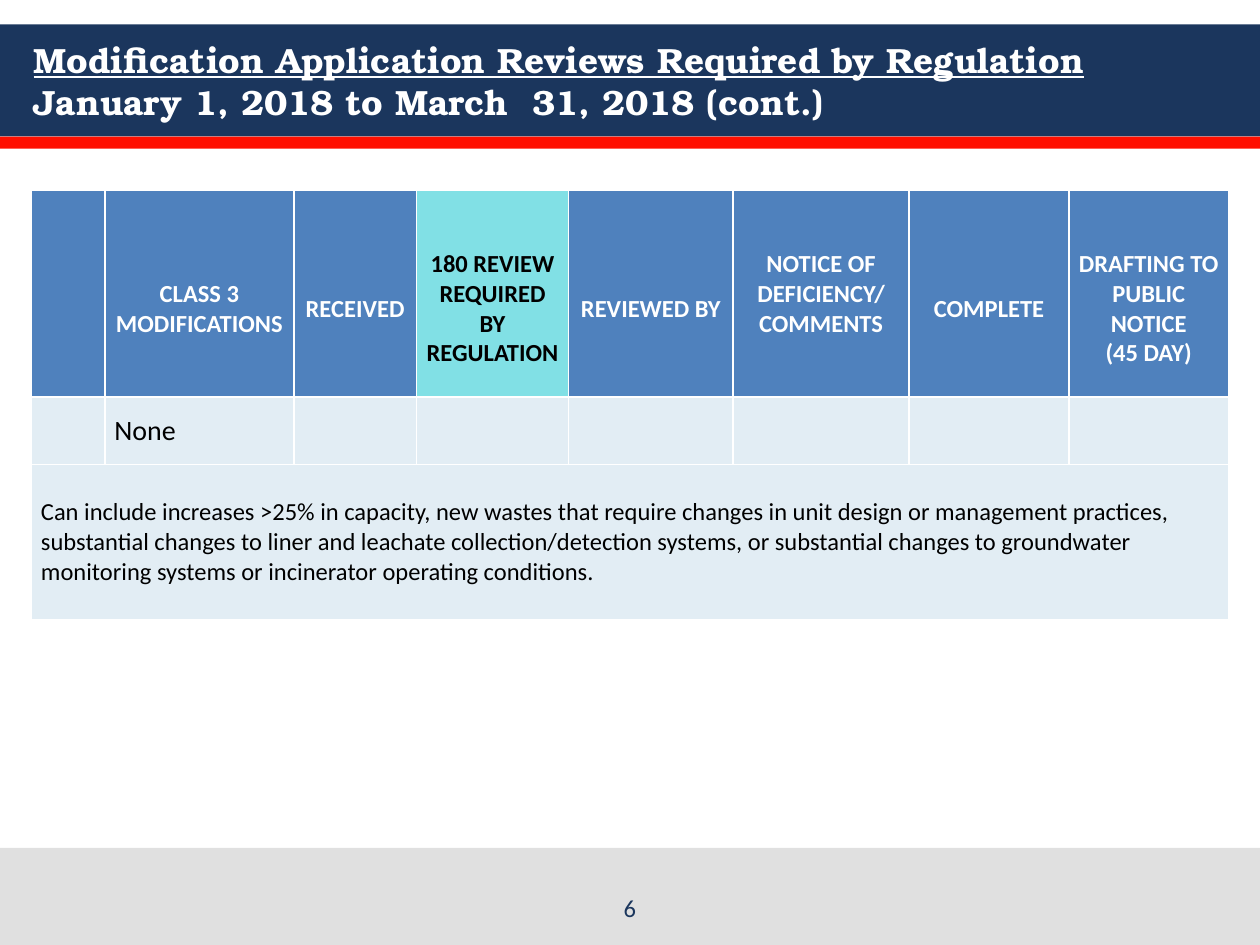
from lxml import etree
from pptx import Presentation
from pptx.dml.color import RGBColor
from pptx.enum.shapes import MSO_SHAPE
from pptx.enum.text import MSO_ANCHOR, PP_ALIGN
from pptx.oxml.ns import qn
from pptx.util import Pt

RECTANGLE = MSO_SHAPE.RECTANGLE
MIDDLE, BOTTOM = MSO_ANCHOR.MIDDLE, MSO_ANCHOR.BOTTOM
LEFT, CENTER = PP_ALIGN.LEFT, PP_ALIGN.CENTER
TITLE_ONLY = 5
HEADER_LINE = 17

COLORS = {
    "navy": "1B365D",
    "red": "FF0F00",
    "footer": "E0E0E0",
    "header": "4F81BD",
    "highlight": "81E0E5",
    "body": "E2EDF4",
    "white": "FFFFFF",
    "black": "000000",
}


def set_font(font, color, **values):
    for name, value in values.items():
        setattr(font, name, value)
    font.color.rgb = RGBColor.from_string(COLORS[color])


def style_cell(cell, fill):
    """Give a table cell white borders, a fill, and its margins."""
    properties = cell._tc.get_or_add_tcPr()
    for side in ("lnL", "lnR", "lnT", "lnB"):
        line = etree.SubElement(properties, qn(f"a:{side}"), w=str(Pt(1)))
        solid = etree.SubElement(line, qn("a:solidFill"))
        etree.SubElement(solid, qn("a:srgbClr"), val=COLORS["white"])
    cell.fill.solid()
    cell.fill.fore_color.rgb = RGBColor.from_string(COLORS[fill])
    cell.vertical_anchor = MIDDLE
    cell.margin_left = cell.margin_right = Pt(5.4)
    cell.margin_top = cell.margin_bottom = 0


presentation = Presentation()
presentation.slide_width = Pt(720)
presentation.slide_height = Pt(540)
slide = presentation.slides.add_slide(presentation.slide_layouts[TITLE_ONLY])

# Bands across the slide: top, height, color
for top, height, color in [(14, 64, "navy"), (78, 7, "red"), (484.5, 55.5, "footer")]:
    band = slide.shapes.add_shape(RECTANGLE, 0, Pt(top), Pt(720), Pt(height))
    band.shadow.inherit = False
    band.fill.solid()
    band.fill.fore_color.rgb = RGBColor.from_string(COLORS[color])
    band.line.fill.background()

# Title, brought in front of the bands
title = slide.shapes.title
title.element.getparent().append(title.element)
title.left, title.top, title.width, title.height = Pt(12), Pt(14), Pt(696), Pt(64.5)
title.text_frame.vertical_anchor = MIDDLE
title.text_frame.text = (
    "Modification Application Reviews Required by Regulation\v"
    "January 1, 2018 to March  31, 2018 (cont.)"
)
paragraph = title.text_frame.paragraphs[0]
paragraph.alignment = LEFT
for run, underline in zip(paragraph.runs, (True, False)):
    set_font(run.font, "white", name="TeX Gyre Bonum", size=Pt(20), bold=True,
             underline=underline)

# Table
column_widths = [42, 108, 70, 87, 94, 100.5, 91.5, 91]
row_heights = [118, 38.5, 88.5]
table = slide.shapes.add_table(
    len(row_heights), len(column_widths),
    Pt(18), Pt(109), Pt(sum(column_widths)), Pt(sum(row_heights)),
).table
for column, width in zip(table.columns, column_widths):
    column.width = Pt(width)
for row, height in zip(table.rows, row_heights):
    row.height = Pt(height)
    for cell in row.cells:
        style_cell(cell, "body" if row is not table.rows[0] and height != row_heights[0] else "header")

# Header text and the space above it
headers = [
    ("CLASS 3 MODIFICATIONS", HEADER_LINE),
    ("RECEIVED", HEADER_LINE),
    ("180 REVIEW REQUIRED BY REGULATION", HEADER_LINE),
    ("REVIEWED BY", HEADER_LINE),
    ("NOTICE OF DEFICIENCY/ COMMENTS", 0),
    ("COMPLETE", HEADER_LINE),
    ("DRAFTING TO PUBLIC NOTICE\v(45 DAY)", HEADER_LINE),
]
for column, (text, space_above) in enumerate(headers, start=1):
    cell = table.cell(0, column)
    highlighted = text.startswith("180")
    if highlighted:
        cell.fill.fore_color.rgb = RGBColor.from_string(COLORS["highlight"])
    cell.margin_top = Pt(space_above)
    cell.text = text
    paragraph = cell.text_frame.paragraphs[0]
    paragraph.alignment = CENTER
    for run in paragraph.runs:
        set_font(run.font, "black" if highlighted else "white",
                 name="Calibri", size=Pt(14), bold=True)

# Body text
table.cell(2, 0).merge(table.cell(2, len(column_widths) - 1))
note = (
    "Can include increases >25% in capacity, new wastes that require changes in unit "
    "design or management practices,\n"
    "substantial changes to liner and leachate collection/detection systems, or "
    "substantial changes to groundwater monitoring systems or incinerator operating "
    "conditions."
)
for row, column, text, size in [(1, 1, "None", 16), (2, 0, note, 14)]:
    cell = table.cell(row, column)
    cell.text = text
    for paragraph in cell.text_frame.paragraphs:
        set_font(paragraph.runs[0].font, "black", name="Calibri", size=Pt(size), bold=False)

# Slide number
number = slide.shapes.add_textbox(Pt(246), Pt(502), Pt(228), Pt(28.5))
number.text_frame.word_wrap = True
number.text_frame.vertical_anchor = BOTTOM
number.text_frame.text = "6"
paragraph = number.text_frame.paragraphs[0]
paragraph.alignment = CENTER
set_font(paragraph.runs[0].font, "navy", name="Calibri", size=Pt(14))

presentation.save("out.pptx")
